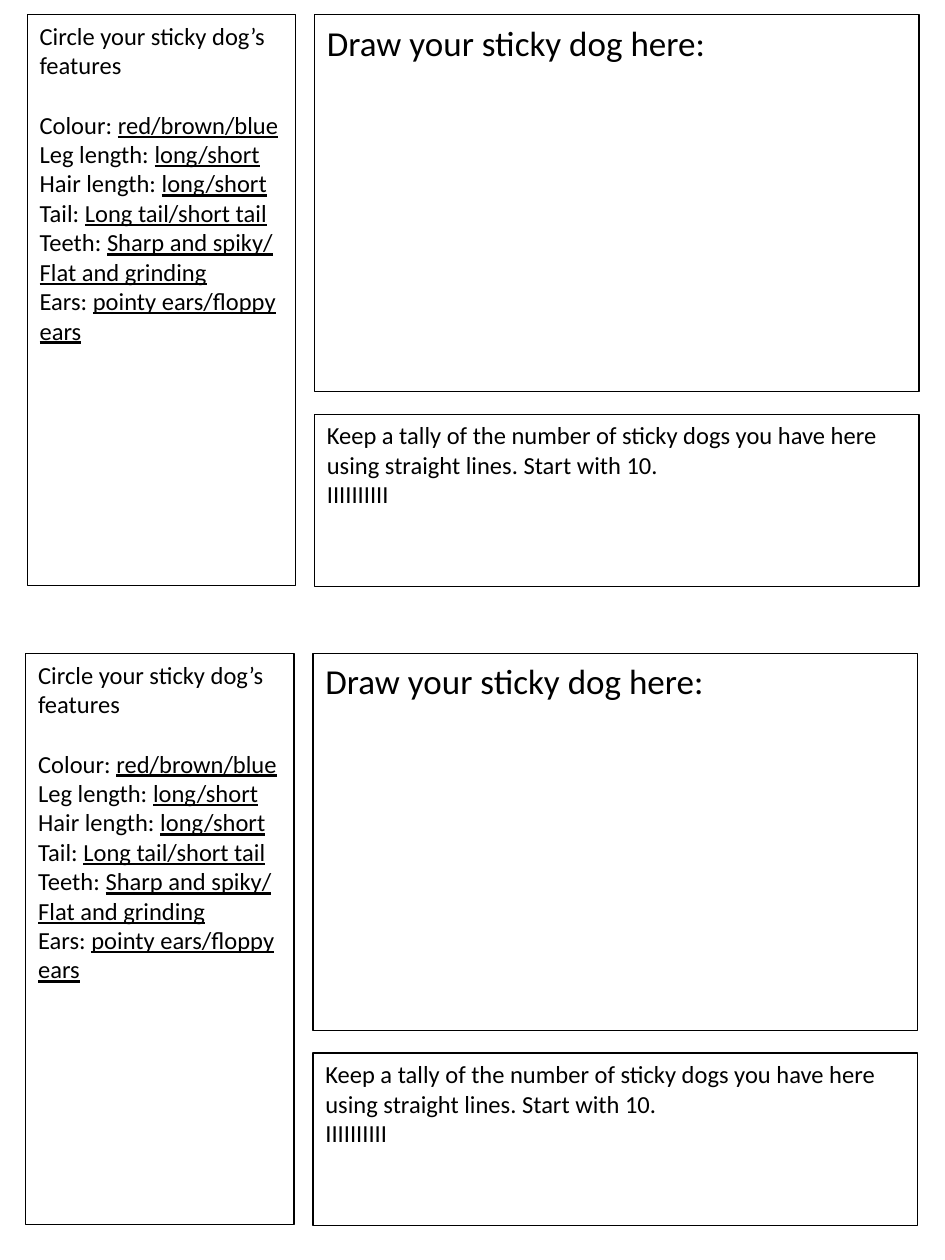
from pptx import Presentation
from pptx.dml.color import RGBColor
from pptx.enum.shapes import MSO_SHAPE
from pptx.enum.text import MSO_ANCHOR, PP_ALIGN
from pptx.util import Cm, Pt

FEATURES = [
    ("Colour: ", "red/brown/blue"),
    ("Leg length: ", "long/short"),
    ("Hair length: ", "long/short"),
    ("Tail: ", "Long tail/short tail"),
    ("Teeth: ", "Sharp and spiky/ Flat and grinding"),
    ("Ears: ", "pointy ears/floppy ears"),
]
TALLY = [
    ("Keep a tally of the number of sticky dogs you have here "
     "using straight lines. Start with 10.",),
    ("I" * 10,),
]


def color(value):
    return RGBColor.from_string(value)


def add_panel(x, y, w, h, lines, size):
    """Add an outlined box; each line is a label and an optional underlined choice."""
    sp = s.shapes.add_shape(MSO_SHAPE.RECTANGLE, Cm(x), Cm(y), Cm(w), Cm(h))
    sp.shadow.inherit = False
    sp.fill.background()
    sp.line.color.rgb = color("000000")
    sp.line.width = Pt(0.75)
    tf = sp.text_frame
    tf.word_wrap = True
    tf.vertical_anchor = MSO_ANCHOR.TOP
    for i, line in enumerate(lines):
        p = tf.paragraphs[0] if i == 0 else tf.add_paragraph()
        p.alignment = PP_ALIGN.LEFT
        for j, text in enumerate(line):
            r = p.add_run()
            r.text = text
            r.font.name = "Calibri"
            r.font.size = Pt(size)
            r.font.color.rgb = color("000000")
            r.font.underline = j == 1
    return tf


prs = Presentation()
prs.slide_width, prs.slide_height = Cm(19.05), Cm(25.4)
s = prs.slides.add_slide(prs.slide_layouts[6])

# Two identical worksheets, one above the other
for left, top in [(0.55, 0.3), (0.52, 13.18)]:
    right = left + 5.79
    tf = add_panel(left, top, 5.41, 11.51,
                   [("Circle your sticky dog’s features",)] + FEATURES, 14)
    tf.paragraphs[1].space_before = Pt(17)
    add_panel(right, top, 12.19, 7.59, [("Draw your sticky dog here:",)], 20)
    add_panel(right, top + 8.05, 12.19, 3.48, TALLY, 14)

prs.save("out.pptx")
